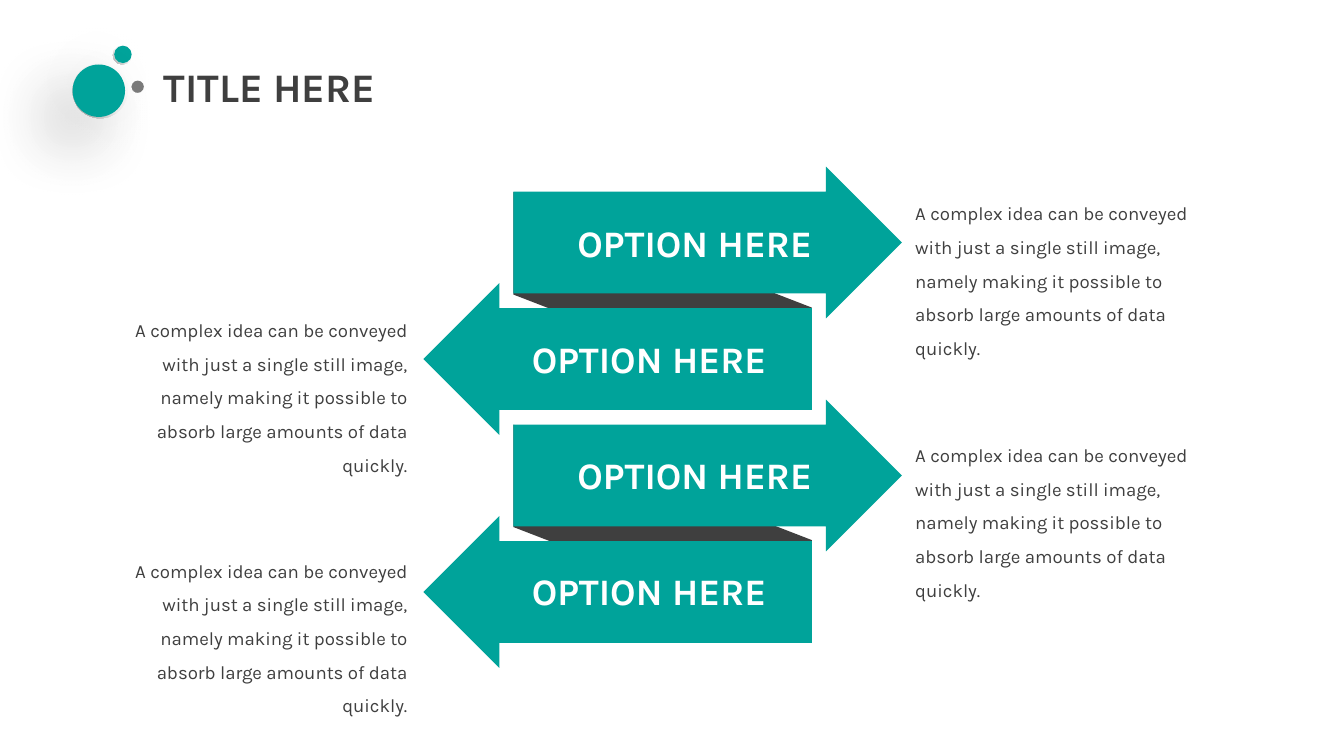
from copy import deepcopy

from lxml.etree import SubElement
from pptx import Presentation
from pptx.dml.color import RGBColor
from pptx.enum.shapes import MSO_SHAPE as Preset
from pptx.enum.text import MSO_ANCHOR as Anchor, MSO_AUTO_SIZE as AutoSize, PP_ALIGN as Align
from pptx.oxml.ns import qn
from pptx.util import Inches, Pt

TEAL, DARK, GREY, WHITE = "00A39A", "3F3F3F", "7B7B7B", "FFFFFF"
BODY = ("A complex idea can be conveyed with just a single still image, "
        "namely making it possible to absorb large amounts of data quickly.")


def write_text(shape, text, size, color, bold=False, align=Align.LEFT, spacing=None,
               margins=(0, 0), auto_size=AutoSize.SHAPE_TO_FIT_TEXT):
    frame = shape.text_frame
    frame.word_wrap = True
    frame.auto_size = auto_size
    frame.vertical_anchor = Anchor.TOP
    frame.margin_left = frame.margin_right = Inches(margins[0])
    frame.margin_top = frame.margin_bottom = Inches(margins[1])
    paragraph = frame.paragraphs[0]
    paragraph.alignment = align
    paragraph.line_spacing = spacing
    run = paragraph.add_run()
    run.text = text
    run.font.name = "Karla"
    run.font.size = Pt(size)
    run.font.bold = bold
    run.font.color.rgb = RGBColor.from_string(color)


def add_shape(preset, left, top, width, height, color, rotation=0, adjustments=()):
    shape = slide.shapes.add_shape(
        preset, Inches(left), Inches(top), Inches(width), Inches(height))
    shape.shadow.inherit = False
    shape.fill.solid()
    shape.fill.fore_color.rgb = RGBColor.from_string(color)
    shape.line.fill.background()
    shape.rotation = rotation
    for index, value in enumerate(adjustments):
        shape.adjustments[index] = value
    return shape


presentation = Presentation()
presentation.slide_width = Inches(10)
presentation.slide_height = Inches(10 * 9 / 16)
slide = presentation.slides.add_slide(presentation.slide_layouts[5])

# Dots beside the title, each with a shaded rim and a soft shadow
for left, top, rim_size, dot_left, dot_top, dot_size, color in [
    (0.84, 0.34, 0.14, 0.85, 0.34, 0.13, TEAL),
    (0.98, 0.6, 0.09, 0.98, 0.6, 0.09, GREY),
    (0.54, 0.47, 0.41, 0.54, 0.48, 0.39, TEAL),
]:
    rim = add_shape(Preset.DONUT, left, top, rim_size, rim_size, WHITE, adjustments=[0.05])
    rim.fill.gradient()
    rim.fill.gradient_angle = 225
    first_stop = next(rim._element.spPr.iter(qn("a:gs")))
    first_stop.addnext(deepcopy(first_stop))
    for stop, (position, stop_color) in zip(
            rim.fill.gradient_stops, [(0, WHITE), (0.55, "F2F2F2"), (1, "A5A5A5")]):
        stop.position = position
        stop.color.rgb = RGBColor.from_string(stop_color)
    dot = add_shape(Preset.OVAL, dot_left, dot_top, dot_size, dot_size, color)
    for shape in (rim, dot):
        effects = shape._element.spPr.find(qn("a:effectLst"))
        shadow = SubElement(effects, qn("a:outerShdw"), blurRad=str(Pt(35)),
                            dist=str(Pt(20)), dir="8100000", algn="tr", rotWithShape="0")
        shadow_color = SubElement(shadow, qn("a:srgbClr"), val="000000")
        SubElement(shadow_color, qn("a:alpha"), val="24000")

# Folds behind each pair of arrows
for top in (2.86, 1.13):
    add_shape(Preset.PARALLELOGRAM, 4.12, top, 1.62, 2.22, DARK, 270, [0.53])

# Arrows alternate right and left, with a label inside and a text at the tip
for index, body_top in enumerate([1.42, 2.29, 3.22, 4.08]):
    arrow_top = 1.24 + 2.6 / 3 * index
    if index % 2 == 0:
        arrow_left, label_left, body_left, rotation, align = 3.82, 4.08, 6.81, 0, Align.LEFT
    else:
        arrow_left, label_left, body_left, rotation, align = 3.15, 3.74, 0.75, 180, Align.RIGHT
    add_shape(Preset.RIGHT_ARROW, arrow_left, arrow_top, 2.89, 1.13, TEAL, rotation, [0.67, 0.5])
    label = slide.shapes.add_textbox(
        Inches(label_left), Inches(1.64 + 2.59 / 3 * index), Inches(2.18), Inches(0.34))
    write_text(label, "OPTION HERE", 20, WHITE, bold=True, align=Align.CENTER)
    body = slide.shapes.add_textbox(
        Inches(body_left), Inches(body_top), Inches(2.28), Inches(1.01))
    write_text(body, BODY, 10, DARK, align=align, spacing=1.5)

title = slide.shapes.title
title.left, title.top = Inches(1.15), Inches(0.42)
title.width, title.height = Inches(3.39), Inches(0.44)
write_text(title, "TITLE HERE", 21.7, DARK, bold=True, margins=(0.07, 0.04),
           auto_size=AutoSize.NONE)

presentation.save("out.pptx")
